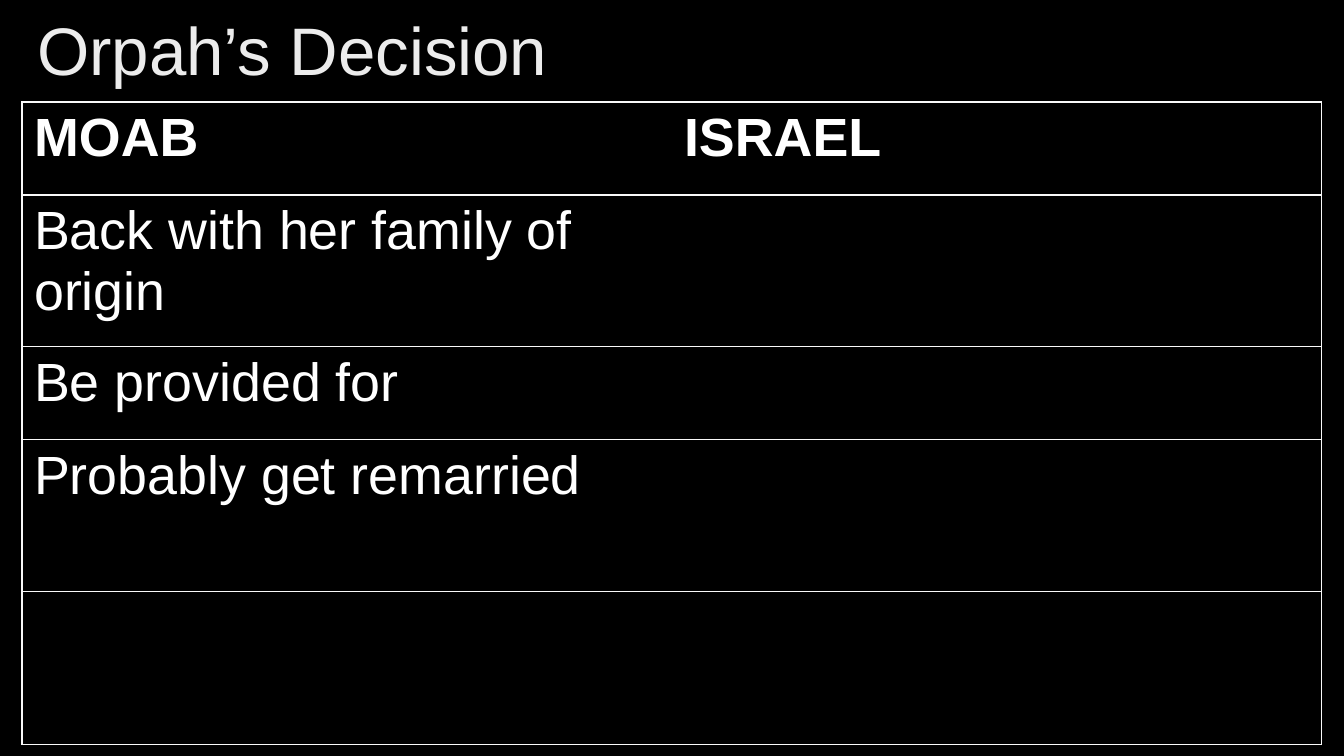
from dataclasses import dataclass

from lxml.etree import SubElement
from pptx import Presentation
from pptx.dml.color import RGBColor
from pptx.enum.text import MSO_ANCHOR, MSO_AUTO_SIZE, PP_ALIGN
from pptx.oxml.ns import qn
from pptx.slide import Slide
from pptx.table import _Cell as Cell
from pptx.text.text import _Paragraph as Paragraph
from pptx.util import Pt

EMU_PER_PX = 914400 / 121
BLACK = RGBColor(0x00, 0x00, 0x00)
WHITE = RGBColor(0xFF, 0xFF, 0xFF)
TITLE_GREY = RGBColor(0xEC, 0xEC, 0xEC)
RULE_GREY = RGBColor(0xF9, 0xF9, 0xF9)
FONT = "Arial"
COLUMN_WIDTH = 650


@dataclass(frozen=True)
class Reason:
    moab: str
    israel: str
    height: int
    bold: bool = False


REASONS = [
    Reason("MOAB", "ISRAEL", 93, bold=True),
    Reason("Back with her family of origin", "", 152),
    Reason("Be provided for", "", 93),
    Reason("Probably get remarried", "", 152),
    Reason("", "", 153),
]


def px(length: int) -> int:
    return round(length * EMU_PER_PX)


def add_run(paragraph: Paragraph, text: str, size: int, color: RGBColor, bold: bool = False) -> None:
    run = paragraph.add_run()
    run.text = text
    run.font.name = FONT
    run.font.size = Pt(size)
    run.font.bold = bold
    run.font.color.rgb = color


def set_borders(cell: Cell, visible_sides: str) -> None:
    properties = cell._tc.get_or_add_tcPr()
    for side in "LRTB":
        border = SubElement(properties, qn(f"a:ln{side}"), w=str(Pt(0.75)))
        if side in visible_sides:
            fill = SubElement(border, qn("a:solidFill"))
            SubElement(fill, qn("a:srgbClr"), val=str(RULE_GREY))
        else:
            SubElement(border, qn("a:noFill"))


def add_title(slide: Slide, text: str) -> None:
    title = slide.shapes.title
    title.left, title.top, title.width, title.height = px(25), px(2), px(626), px(93)
    frame = title.text_frame
    frame.auto_size = MSO_AUTO_SIZE.NONE
    frame.word_wrap = True
    frame.vertical_anchor = MSO_ANCHOR.MIDDLE
    paragraph = frame.paragraphs[0]
    paragraph.alignment = PP_ALIGN.LEFT
    add_run(paragraph, text, 40, TITLE_GREY)


def add_comparison(slide: Slide, reasons: list[Reason]) -> None:
    height = sum(reason.height for reason in reasons)
    comparison = slide.shapes.add_table(
        len(reasons), 2, px(22), px(102), px(2 * COLUMN_WIDTH), px(height)
    ).table
    comparison.first_row = False
    comparison.horz_banding = False
    for column in comparison.columns:
        column.width = px(COLUMN_WIDTH)
    for row, reason in zip(comparison.rows, reasons):
        row.height = px(reason.height)
        for cell, text, outer_side in zip(row.cells, (reason.moab, reason.israel), "LR"):
            set_borders(cell, outer_side + "TB")
            cell.fill.solid()
            cell.fill.fore_color.rgb = BLACK
            if text:
                add_run(cell.text_frame.paragraphs[0], text, 32, WHITE, reason.bold)


def main() -> None:
    deck = Presentation()
    deck.slide_width, deck.slide_height = px(1344), px(756)
    slide = deck.slides.add_slide(deck.slide_layouts[5])
    slide.background.fill.solid()
    slide.background.fill.fore_color.rgb = BLACK
    add_title(slide, "Orpah’s Decision")
    add_comparison(slide, REASONS)
    deck.save("out.pptx")


if __name__ == "__main__":
    main()
